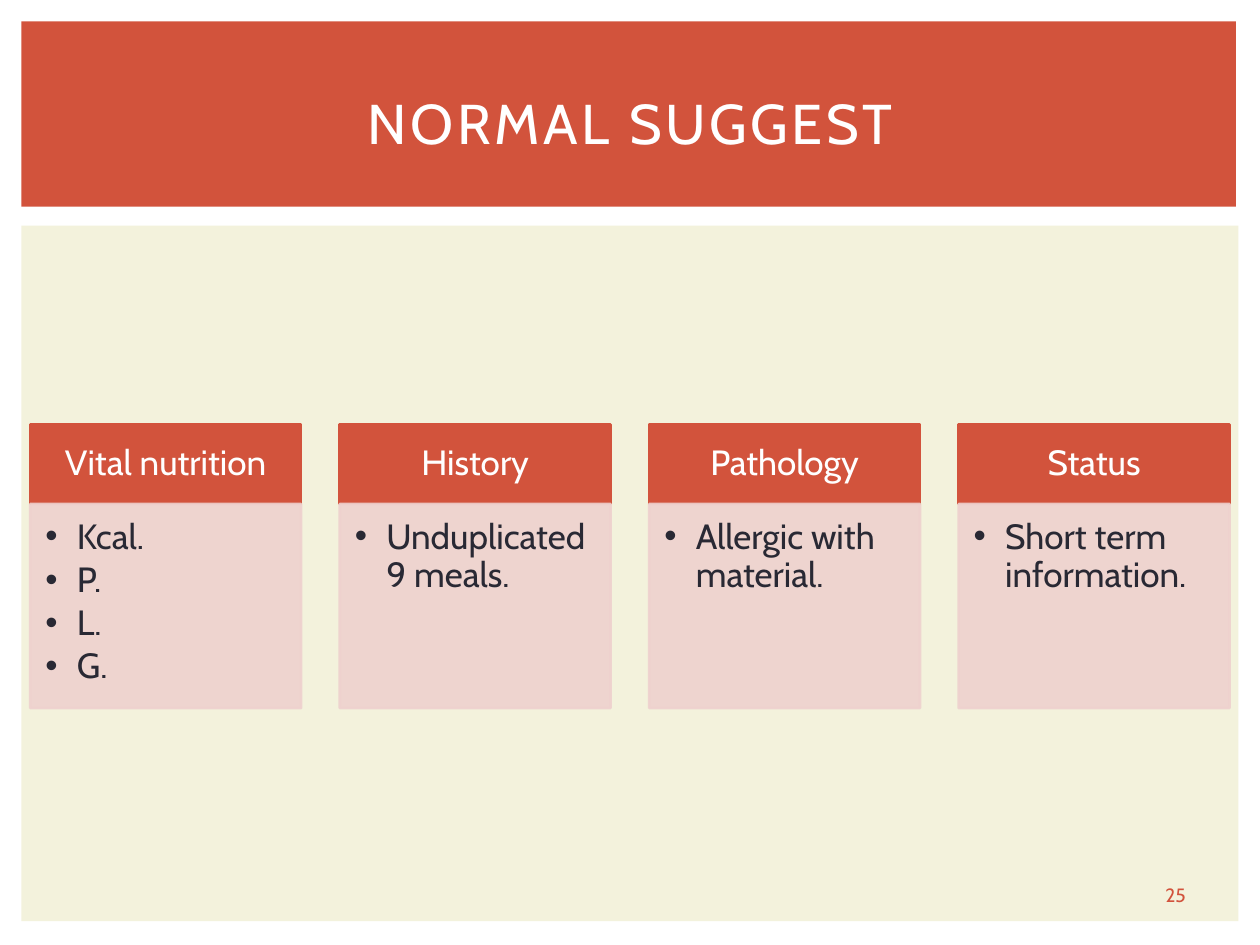
"""Build the "Normal suggest" slide with four headed cards."""
from pptx import Presentation
from pptx.dml.color import RGBColor
from pptx.enum.shapes import MSO_SHAPE
from pptx.enum.text import MSO_ANCHOR, PP_ALIGN
from pptx.oxml.ns import qn
from pptx.oxml.xmlchemy import OxmlElement
from pptx.util import Inches, Pt

RED, CREAM, PINK, INK, WHITE = "D2533C", "F3F2DC", "EED1CE", "292934", "FFFFFF"
CARDS = [
    ("Vital nutrition", ["Kcal.", "P.", "L.", "G."]),
    ("History", ["Unduplicated 9 meals."]),
    ("Pathology", ["Allergic with material."]),
    ("Status", ["Short term information."]),
]


def color(value):
    return RGBColor.from_string(value)


def add_xml(parent, tag, **attributes):
    element = OxmlElement(tag)
    for name, value in attributes.items():
        element.set(name, value)
    parent.append(element)


def write(para, text, size=20, ink=INK, align=PP_ALIGN.LEFT, line=None,
          after=0, tracking=0, bullet=False):
    para.alignment = align
    para.line_spacing = line
    para.space_after = Pt(after)
    span = para.add_run()
    span.text = text
    span.font.name = "Cabin"
    span.font.size = Pt(size)
    span.font.color.rgb = color(ink)
    if tracking:
        span.font._element.set("spc", str(tracking * 100))
    if bullet:
        para.level = 1
        properties = para._p.get_or_add_pPr()
        properties.set("marL", str(Inches(0.25)))
        properties.set("indent", str(-Inches(0.25)))
        add_xml(properties, "a:buFont", typeface="Arial")
        add_xml(properties, "a:buChar", char="•")


class SlideBuilder:
    def __init__(self, page):
        self.page = page

    def panel(self, left, top, width, height, fill, border=None, opacity=100):
        box = self.page.shapes.add_shape(
            MSO_SHAPE.RECTANGLE, Inches(left), Inches(top), Inches(width), Inches(height))
        box.shadow.inherit = False
        box.fill.solid()
        box.fill.fore_color.rgb = color(fill)
        if border:
            box.line.color.rgb = color(border)
            box.line.width = Pt(1.5)
        else:
            box.line.fill.background()
        if opacity < 100:
            for paint in box._element.spPr.iter(qn("a:srgbClr")):
                add_xml(paint, "a:alpha", val=str(opacity * 1000))
        return box

    def label(self, left, top, width, height, text, **style):
        box = self.page.shapes.add_textbox(
            Inches(left), Inches(top), Inches(width), Inches(height))
        self.fill_text(box, [text], MSO_ANCHOR.MIDDLE, (0.1, 0.05, 0.1, 0.05), **style)

    def fill_text(self, box, lines, anchor, insets, **style):
        frame = box.text_frame
        frame.word_wrap = True
        frame.vertical_anchor = anchor
        (frame.margin_left, frame.margin_top,
         frame.margin_right, frame.margin_bottom) = map(Inches, insets)
        for index, text in enumerate(lines):
            para = frame.add_paragraph() if index else frame.paragraphs[0]
            write(para, text, **style)

    def card(self, left, heading, items):
        head = self.panel(left, 3.37, 2.15, 0.63, RED, border=RED)
        self.fill_text(head, [heading], MSO_ANCHOR.MIDDLE, (0.16, 0.09, 0.16, 0.09),
                       ink=WHITE, align=PP_ALIGN.CENTER, line=0.9, after=7)
        body = self.panel(left, 4, 2.15, 1.62, PINK, border=PINK, opacity=90)
        self.fill_text(body, items, MSO_ANCHOR.TOP, (0.12, 0.12, 0.16, 0.17),
                       line=0.9, after=3, bullet=True)


def main():
    deck = Presentation()
    deck.slide_width, deck.slide_height = Inches(10), Inches(7.5)
    builder = SlideBuilder(deck.slides.add_slide(deck.slide_layouts[6]))
    builder.panel(0.17, 1.79, 9.66, 5.52, CREAM)
    builder.panel(0.17, 0.17, 9.64, 1.47, RED)
    builder.label(9.01, 6.95, 0.64, 0.3, "25", size=11, ink=RED, align=PP_ALIGN.CENTER)
    builder.label(0.42, 0.39, 9.17, 1.15, "NORMAL SUGGEST", size=32, ink=WHITE,
                  align=PP_ALIGN.CENTER, tracking=2)
    for index, (heading, items) in enumerate(CARDS):
        builder.card(0.24 + index * 2.456, heading, items)
    deck.save("out.pptx")


if __name__ == "__main__":
    main()
